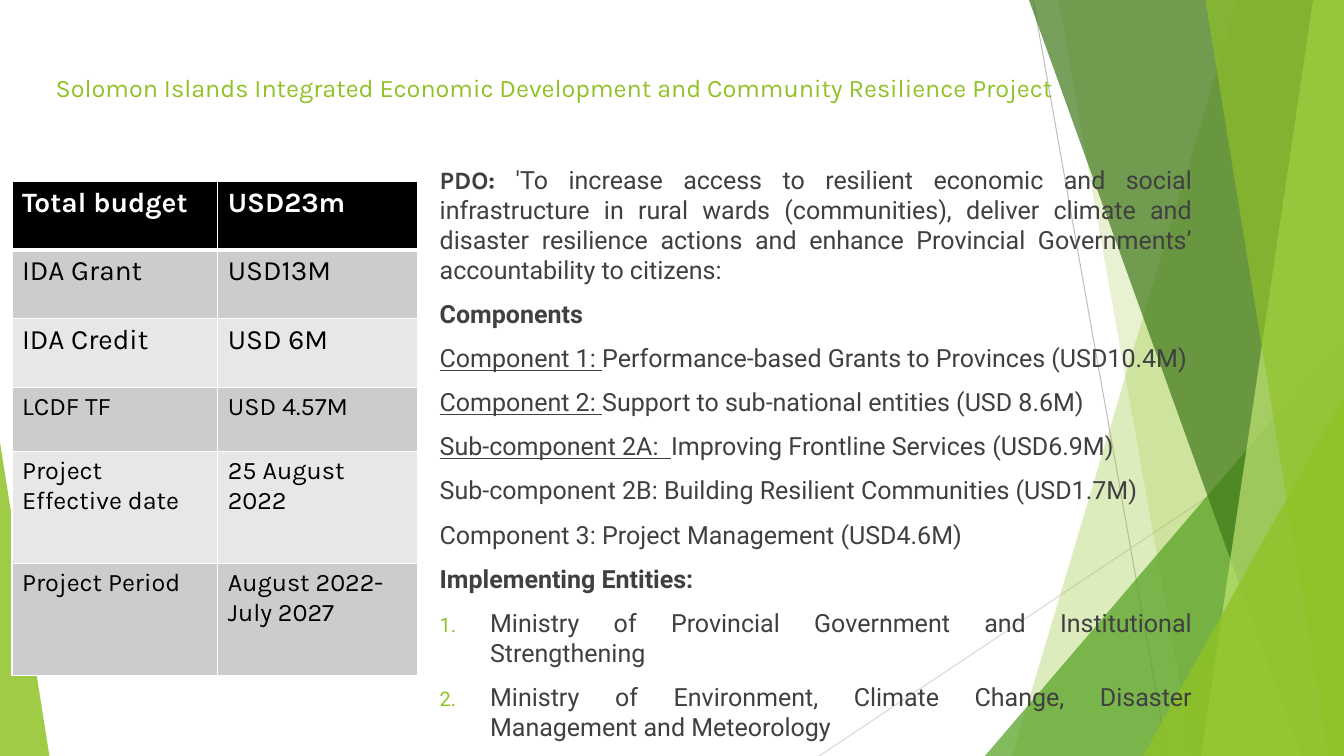
from lxml.etree import SubElement
from pptx import Presentation
from pptx.dml.color import RGBColor
from pptx.enum.shapes import MSO_CONNECTOR, MSO_SHAPE
from pptx.enum.text import MSO_ANCHOR, PP_ALIGN
from pptx.oxml import parse_xml
from pptx.oxml.ns import nsdecls, qn
from pptx.util import Pt

WIDTH, HEIGHT = 960, 540
GREEN, GREY, BLACK, WHITE = "90C226", "404040", "000000", "FFFFFF"


def color(value):
    return RGBColor.from_string(value)


class SlideBuilder:
    """Draws styled elements on one slide, with lengths in points."""

    heading_font = "Karla"
    body_font = "Roboto"
    body_size = 17.9

    def __init__(self, page):
        self.page = page
        self.shapes = page.shapes

    def format_span(self, span, font, size, ink, bold=False, underline=False):
        span.font.name = font
        span.font.size = Pt(size)
        span.font.color.rgb = color(ink)
        span.font.bold = bold
        span.font.underline = underline

    def line(self, start, end, ink):
        connector = self.shapes.add_connector(
            MSO_CONNECTOR.STRAIGHT, *(Pt(value) for value in start + end))
        connector.line.color.rgb = color(ink)
        connector.line.width = Pt(0.75)
        SubElement(connector._element.spPr, qn("a:effectLst"))

    def paint(self, shape, fill, opacity):
        shape.shadow.inherit = False
        shape.fill.solid()
        shape.fill.fore_color.rgb = color(fill)
        shape.line.fill.background()
        shade = shape._element.spPr.find(qn("a:solidFill")).find(qn("a:srgbClr"))
        SubElement(shade, qn("a:alpha"), val=str(opacity * 1000))

    def band(self, top_x, bottom_x, fill, opacity):
        outline = self.shapes.build_freeform(Pt(top_x), 0)
        corners = [(WIDTH, 0), (WIDTH, HEIGHT), (bottom_x, HEIGHT)]
        outline.add_line_segments([(Pt(x), Pt(y)) for x, y in corners])
        self.paint(outline.convert_to_shape(), fill, opacity)

    def triangle(self, left, top, width, apex, fill, opacity):
        shape = self.shapes.add_shape(MSO_SHAPE.ISOSCELES_TRIANGLE, Pt(left), Pt(top),
                                      Pt(width), Pt(HEIGHT - top))
        shape.adjustments[0] = apex
        self.paint(shape, fill, opacity)

    def text_box(self, left, top, width, height):
        box = self.shapes.add_textbox(Pt(left), Pt(top), Pt(width), Pt(height))
        box.text_frame.word_wrap = True
        box.text_frame.vertical_anchor = MSO_ANCHOR.TOP
        return box.text_frame

    def title(self, text, *frame):
        para = self.text_box(*frame).paragraphs[0]
        para.text = text
        para.alignment = PP_ALIGN.CENTER
        self.format_span(para.runs[0], self.heading_font, 18, GREEN)

    def number(self, para):
        properties = para._p.get_or_add_pPr()
        properties.set("marL", str(Pt(36)))
        properties.set("indent", str(Pt(-36)))
        shade = SubElement(properties, qn("a:buClr"))
        SubElement(shade, qn("a:srgbClr"), val=GREEN)
        SubElement(properties, qn("a:buSzPct"), val="80000")
        SubElement(properties, qn("a:buAutoNum"), type="arabicPeriod")

    def body(self, entries, *frame):
        text_frame = self.text_box(*frame)
        for index, (style, lead, rest) in enumerate(entries):
            para = text_frame.add_paragraph() if index else text_frame.paragraphs[0]
            para.alignment = PP_ALIGN.JUSTIFY
            para.space_before = Pt(10 if index else 0)
            if style == "number":
                self.number(para)
            font = self.heading_font if style == "label" else self.body_font
            if lead:
                span = para.add_run()
                span.text = lead
                self.format_span(span, font, self.body_size, GREY,
                                 style in ("label", "bold"), style == "underline")
            if rest:
                span = para.add_run()
                span.text = rest
                self.format_span(span, self.body_font, self.body_size, GREY)

    def cell(self, cell, text, size, ink, fill, bold):
        cell.text = text
        self.format_span(cell.text_frame.paragraphs[0].runs[0],
                         self.heading_font, size, ink, bold)
        cell.fill.solid()
        cell.fill.fore_color.rgb = color(fill)
        properties = cell._tc.get_or_add_tcPr()
        for index, side in enumerate("LRTB"):
            width = Pt(3 if bold and side == "B" else 1)
            properties.insert(index, parse_xml(
                f'<a:ln{side} {nsdecls("a")} w="{width}"><a:solidFill>'
                f'<a:srgbClr val="{WHITE}"/></a:solidFill></a:ln{side}>'))

    def table(self, rows, heights, widths, left, top):
        grid = self.shapes.add_table(len(rows), len(widths), Pt(left), Pt(top),
                                     Pt(sum(widths)), Pt(sum(heights))).table
        grid.horz_banding = False
        for column, width in zip(grid.columns, widths):
            column.width = Pt(width)
        for index, texts in enumerate(rows):
            grid.rows[index].height = Pt(heights[index])
            header = index == 0
            fill = BLACK if header else ("E7E7E7", "CCCCCC")[index % 2]
            for column, text in enumerate(texts):
                self.cell(grid.cell(index, column), text, 20 if index < 3 else 18,
                          WHITE if header else BLACK, fill, header)


BUDGET = [
    ("Total budget", "USD23m"),
    ("IDA Grant", "USD13M"),
    ("IDA Credit", "USD 6M"),
    ("LCDF TF", "USD 4.57M"),
    ("Project Effective date", "25 August 2022"),
    ("Project Period", "August 2022-July 2027"),
]
DETAILS = [
    ("label", "PDO:", " 'To increase access to resilient economic and social infrastructure "
     "in rural wards (communities), deliver climate and disaster resilience actions and "
     "enhance Provincial Governments’ accountability to citizens:"),
    ("bold", "Components", ""),
    ("underline", "Component 1: ", "Performance-based Grants to Provinces (USD10.4M)"),
    ("underline", "Component 2: ", "Support to sub-national entities (USD 8.6M)"),
    ("underline", "Sub-component 2A:  ", "Improving Frontline Services (USD6.9M)"),
    ("plain", "", "Sub-component 2B: Building Resilient Communities (USD1.7M)"),
    ("plain", "", "Component 3: Project Management (USD4.6M)"),
    ("bold", "Implementing Entities: ", ""),
    ("number", "", "Ministry of Provincial Government and Institutional Strengthening"),
    ("number", "", "Ministry of Environment, Climate Change, Disaster Management "
     "and Meteorology"),
]


def main():
    deck = Presentation()
    deck.slide_width, deck.slide_height = Pt(WIDTH), Pt(HEIGHT)
    builder = SlideBuilder(deck.slides.add_slide(deck.slide_layouts[6]))
    builder.line((738, 0), (834, HEIGHT), "BFBFBF")
    builder.line((WIDTH, 290), (585, HEIGHT), "D9D9D9")
    builder.band(884, 723, GREEN, 30)
    builder.band(756, 852, GREEN, 20)
    builder.triangle(703.5, 240, 256.5, 1, "54A021", 72)
    builder.band(735, 929.5, "3F7819", 70)
    builder.band(938, 858, "C0E474", 70)
    builder.band(861, 949, GREEN, 65)
    builder.triangle(816.5, 283, 143.5, 1, GREEN, 80)
    builder.triangle(0, 316, 35.3, 0, GREEN, 85)
    builder.title("Solomon Islands Integrated Economic Development and Community "
                  "Resilience Project", 8.6, 48, 775, 48)
    builder.body(DETAILS, 307, 114, 552, 378)
    builder.table(BUDGET, (49, 49, 49, 46, 80, 80), (147, 142.5), 8.6, 129.6)
    deck.save("out.pptx")


if __name__ == "__main__":
    main()
